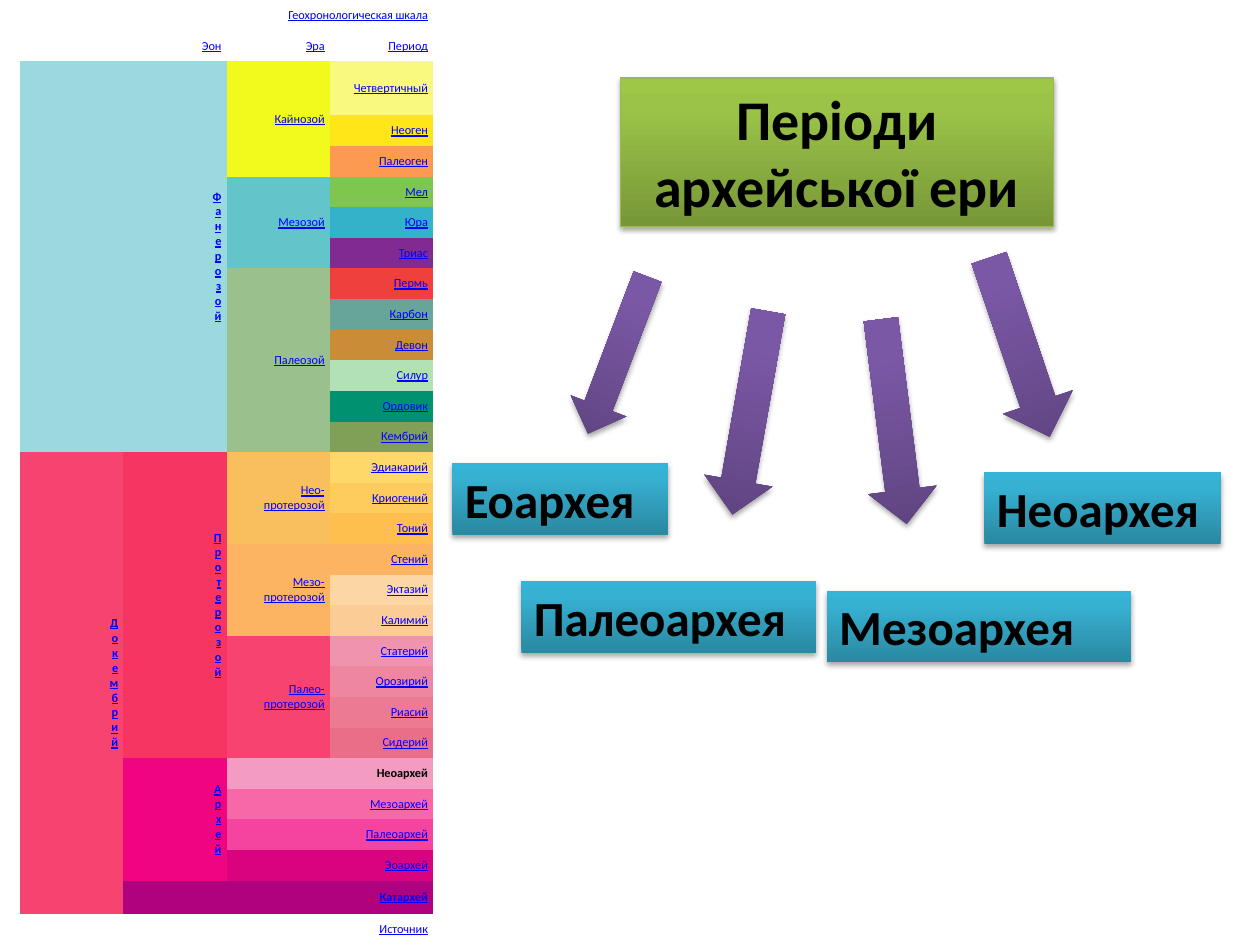
from dataclasses import dataclass

import pptx
import pptx.dml.color
import pptx.enum.shapes
import pptx.enum.text
import pptx.oxml.ns
import pptx.util
from lxml import etree

Pt = pptx.util.Pt
RGBColor = pptx.dml.color.RGBColor
qn = pptx.oxml.ns.qn
Shapes = pptx.enum.shapes.MSO_SHAPE
Align = pptx.enum.text.PP_ALIGN
Anchor = pptx.enum.text.MSO_ANCHOR

FONT = "Calibri"
BLACK = RGBColor(0x00, 0x00, 0x00)
LINK_BLUE = RGBColor(0x00, 0x00, 0xFF)
WHITE = RGBColor(0xFF, 0xFF, 0xFF)
GREEN_EDGE = RGBColor(0x98, 0xB9, 0x55)
# Gradient colours at 0, 80 and 100 percent, from bottom to top
STOPS = (0, 80, 100)
GREEN = tuple(map(RGBColor.from_string, ("779737", "9BC348", "9DC746")))
TEAL = tuple(map(RGBColor.from_string, ("2A88A2", "37B1D2", "34B4D6")))
PURPLE = tuple(map(RGBColor.from_string, ("5F4480", "7B58A6", "7C57A8")))

NO_GRID_STYLE = "{2D5ABB26-0587-4C30-8999-92F81FD0307C}"
COLUMN_WIDTH = 59
ROW_HEIGHT = 17.5
ROW_COUNT = 30
TALL_ROWS = {2: 31, 28: 19}


@dataclass(frozen=True)
class Unit:
    """A unit of the time scale; a vertical one has one letter a line."""
    row: int
    column: int
    name: str
    color: RGBColor
    rows: int = 1
    columns: int = 1
    bold: bool = False
    vertical: bool = False
    linked: bool = True


@dataclass(frozen=True)
class Box:
    text: str
    left: float
    top: float
    width: float
    height: float = 41


@dataclass(frozen=True)
class Arrow:
    left: float
    top: float
    width: float
    height: float
    rotation: float


HEADINGS = [
    Unit(0, 0, "Геохронологическая шкала", WHITE, columns=4),
    Unit(1, 0, "Эон", WHITE, columns=2),
    Unit(1, 2, "Эра", WHITE),
    Unit(1, 3, "Период", WHITE),
    Unit(29, 0, "Источник", WHITE, columns=4),
]
EONS = [
    Unit(2, 0, "Фанерозой", RGBColor(0x9A, 0xD9, 0xDD), 12, 2, True, True),
    Unit(14, 0, "Докембрий", RGBColor(0xF7, 0x43, 0x70), 15, 1, True, True),
    Unit(14, 1, "Протерозой", RGBColor(0xF7, 0x35, 0x63), 10, 1, True, True),
    Unit(24, 1, "Архей", RGBColor(0xF0, 0x04, 0x7F), 4, 1, True, True),
    Unit(28, 1, "Катархей", RGBColor(0xAE, 0x02, 0x7E), 1, 3, True),
]
ERAS = [
    Unit(2, 2, "Кайнозой", RGBColor(0xF2, 0xF9, 0x1D), 3),
    Unit(5, 2, "Мезозой", RGBColor(0x62, 0xC5, 0xCA), 3),
    Unit(8, 2, "Палеозой", RGBColor(0x99, 0xC0, 0x8D), 6),
    Unit(14, 2, "Нео-\vпротерозой", RGBColor(0xFA, 0xBF, 0x5D), 3),
    Unit(17, 2, "Мезо-\vпротерозой", RGBColor(0xFD, 0xB4, 0x62), 3),
    Unit(20, 2, "Палео-\vпротерозой", RGBColor(0xF7, 0x43, 0x70), 4),
    Unit(24, 2, "Неоархей", RGBColor(0xF4, 0x9B, 0xC1), 1, 2, bold=True, linked=False),
    Unit(25, 2, "Мезоархей", RGBColor(0xF7, 0x68, 0xA9), 1, 2),
    Unit(26, 2, "Палеоархей", RGBColor(0xF4, 0x44, 0x9F), 1, 2),
    Unit(27, 2, "Эоархей", RGBColor(0xDA, 0x03, 0x7F), 1, 2),
]
PERIOD_COLORS = {
    "Четвертичный": "F9F97F", "Неоген": "FFE619", "Палеоген": "FD9A52",
    "Мел": "7FC64E", "Юра": "34B2C9", "Триас": "812B92",
    "Пермь": "F0403C", "Карбон": "67A599", "Девон": "CB8C37",
    "Силур": "B3E1B6", "Ордовик": "009270", "Кембрий": "7FA056",
    "Эдиакарий": "FED96A", "Криогений": "FECC5C", "Тоний": "FEBF4E",
    "Стений": "FDB462", "Эктазий": "FCD6A4", "Калимий": "FBCC96",
    "Статерий": "EF93AE", "Орозирий": "EE86A0", "Риасий": "EC7A93",
    "Сидерий": "EB6E88",
}
PERIODS = [Unit(row, 3, name, RGBColor.from_string(color))
           for row, (name, color) in enumerate(PERIOD_COLORS.items(), start=2)]

TITLE = Box("Періоди архейської ери", 354.5, 44.5, 247.5, 85)
ARCHEAN_ERAS = [
    Box("Еоархея", 258.5, 264.5, 123.5),
    Box("Палеоархея", 298, 332, 168.5),
    Box("Мезоархея", 472.5, 337.5, 174),
    Box("Неоархея", 562.5, 270, 135),
]
ARROWS = [
    Arrow(409, 177, 39.5, 118, 10),
    Arrow(336, 155, 34, 96, 20.8),
    Arrow(491, 182, 39.5, 118, 352.8),
    Arrow(561.5, 144.5, 42, 108, 341.3),
]


def style_font(paragraph, size: float, color: RGBColor, bold: bool) -> None:
    font = paragraph.font
    font.name, font.size, font.bold = FONT, Pt(size), bold
    font.color.rgb = color


def paint(shape, colors: tuple) -> None:
    """Give a shape a vertical gradient, no outline and a soft shadow below."""
    shape.fill.gradient()
    shape.fill.gradient_angle = 90
    stop_list = shape._element.spPr.find(qn("a:gradFill")).find(qn("a:gsLst"))
    for stop in list(stop_list):
        stop_list.remove(stop)
    for position, color in zip(STOPS, colors):
        stop = etree.SubElement(stop_list, qn("a:gs"), pos=str(position * 1000))
        etree.SubElement(stop, qn("a:srgbClr"), val=str(color))
    shape.line.fill.background()
    shape.shadow.inherit = False
    effects = shape._element.spPr.find(qn("a:effectLst"))
    shadow = etree.SubElement(effects, qn("a:outerShdw"), blurRad=str(Pt(3.15)),
                              dist=str(Pt(1.8)), dir="5400000", rotWithShape="0")
    shade = etree.SubElement(shadow, qn("a:srgbClr"), val=str(BLACK))
    etree.SubElement(shade, qn("a:alpha"), val="35000")


def draw_box(slide, box: Box, colors: tuple, size: float, alignment):
    shape = slide.shapes.add_shape(Shapes.RECTANGLE, Pt(box.left), Pt(box.top),
                                   Pt(box.width), Pt(box.height))
    paint(shape, colors)
    frame = shape.text_frame
    frame.word_wrap = True
    frame.auto_size = pptx.enum.text.MSO_AUTO_SIZE.SHAPE_TO_FIT_TEXT
    frame.vertical_anchor = Anchor.TOP
    frame.text = box.text
    paragraph = frame.paragraphs[0]
    paragraph.alignment = alignment
    style_font(paragraph, size, BLACK, True)
    return shape


def draw_arrow(slide, arrow: Arrow) -> None:
    shape = slide.shapes.add_shape(Shapes.DOWN_ARROW, Pt(arrow.left), Pt(arrow.top),
                                   Pt(arrow.width), Pt(arrow.height))
    shape.rotation = arrow.rotation
    paint(shape, PURPLE)


def fill_unit(table, unit: Unit) -> None:
    cell = table.cell(unit.row, unit.column)
    if unit.rows * unit.columns > 1:
        cell.merge(table.cell(unit.row + unit.rows - 1, unit.column + unit.columns - 1))
    cell.fill.solid()
    cell.fill.fore_color.rgb = unit.color
    cell.margin_left = cell.margin_right = Pt(3)
    cell.margin_top = cell.margin_bottom = Pt(1.5)
    cell.vertical_anchor = Anchor.MIDDLE
    cell.text = "\v".join(unit.name) if unit.vertical else unit.name
    paragraph = cell.text_frame.paragraphs[0]
    paragraph.alignment = Align.RIGHT
    style_font(paragraph, 7, LINK_BLUE if unit.linked else BLACK, unit.bold)
    paragraph.font.underline = unit.linked


def draw_time_scale(slide) -> None:
    frame = slide.shapes.add_table(ROW_COUNT, 4, Pt(11.5), Pt(0),
                                   Pt(4 * COLUMN_WIDTH), Pt(540))
    table = frame.table
    table.first_row = table.horz_banding = False
    table._tbl.tblPr.find(qn("a:tableStyleId")).text = NO_GRID_STYLE
    for column in table.columns:
        column.width = Pt(COLUMN_WIDTH)
    for index, row in enumerate(table.rows):
        row.height = Pt(TALL_ROWS.get(index, ROW_HEIGHT))
    for unit in HEADINGS + EONS + ERAS + PERIODS:
        fill_unit(table, unit)


def main() -> None:
    deck = pptx.Presentation()
    deck.slide_width, deck.slide_height = Pt(720), Pt(540)
    slide = deck.slides.add_slide(deck.slide_layouts[6])
    title = draw_box(slide, TITLE, GREEN, 32, Align.CENTER)
    title.line.color.rgb = GREEN_EDGE
    title.line.width = Pt(0.75)
    for era in ARCHEAN_ERAS:
        draw_box(slide, era, TEAL, 28, Align.LEFT)
    for arrow in ARROWS:
        draw_arrow(slide, arrow)
    draw_time_scale(slide)
    deck.save("out.pptx")


if __name__ == "__main__":
    main()
